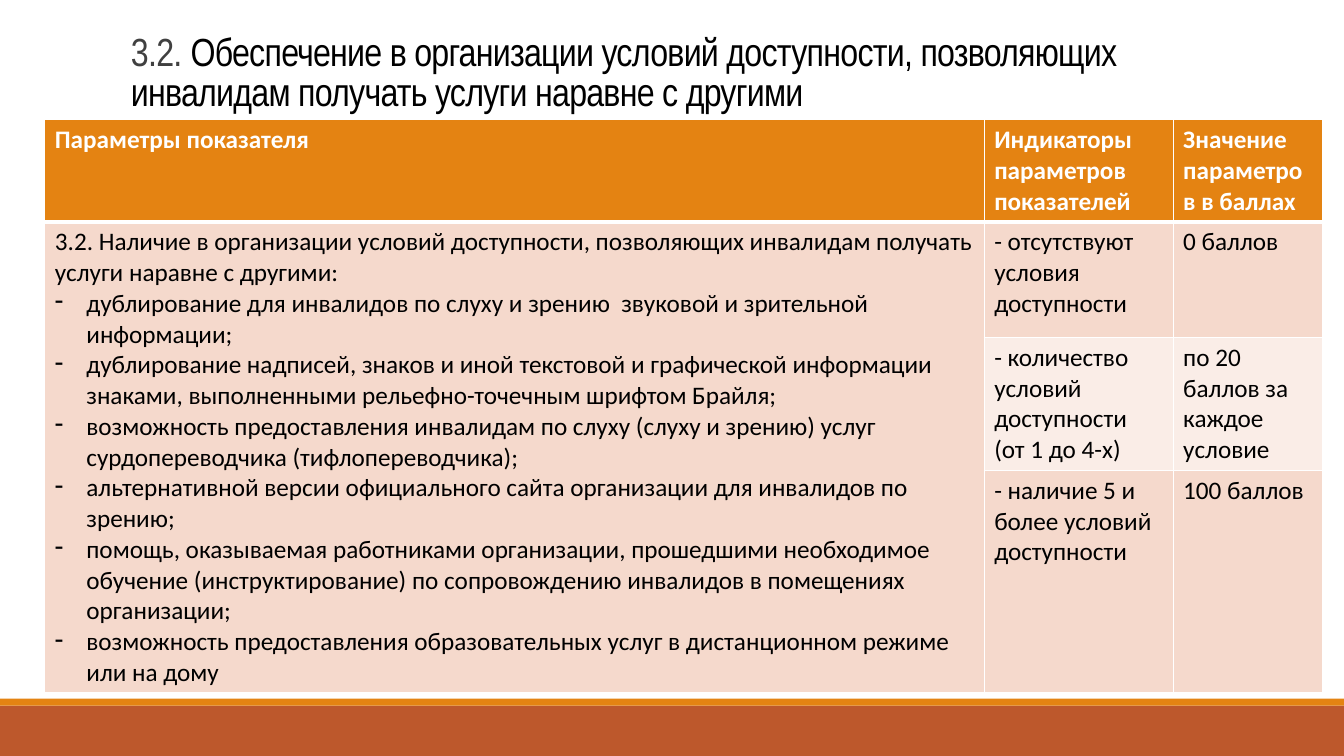
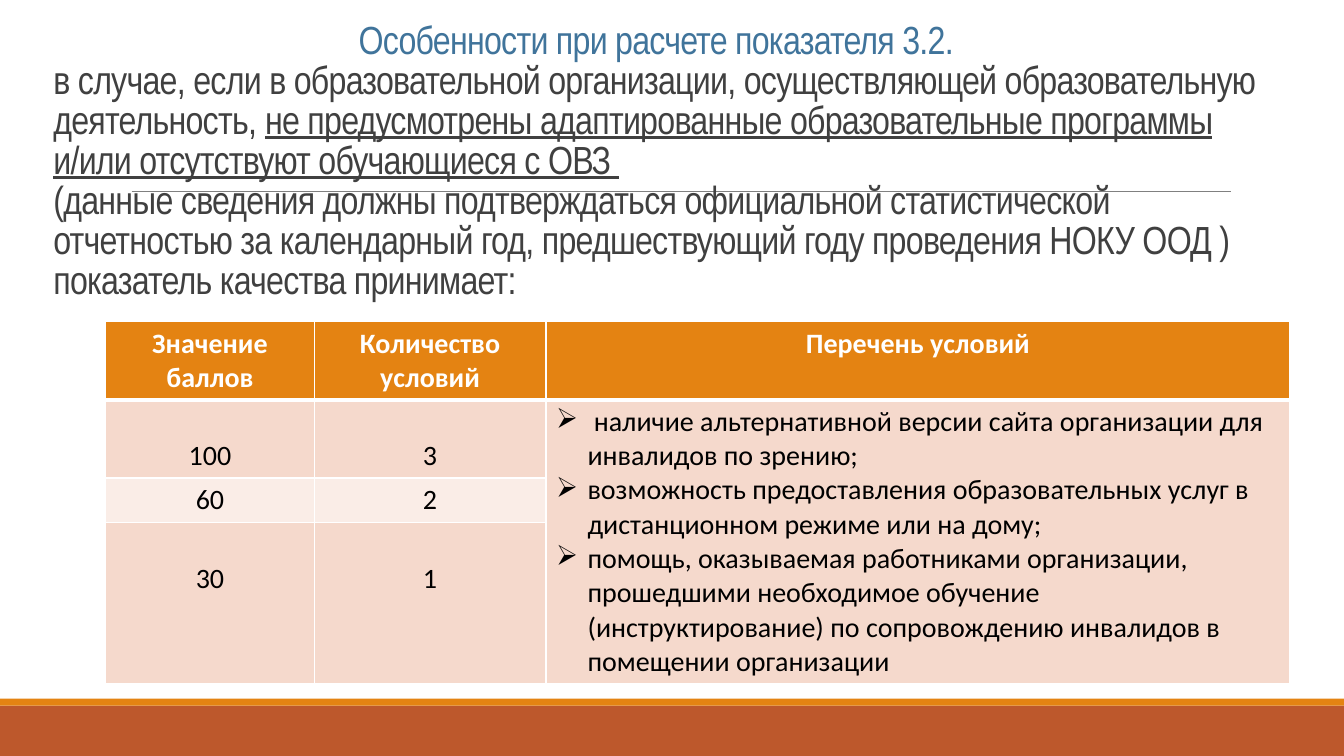
"""Build two slides on accessibility indicator 3.2 and how it is scored."""
from lxml.etree import SubElement
from pptx import Presentation
from pptx.dml.color import RGBColor
from pptx.enum.shapes import MSO_CONNECTOR, MSO_SHAPE
from pptx.enum.text import MSO_ANCHOR, PP_ALIGN
from pptx.oxml.ns import qn
from pptx.util import Pt

WIDTH, HEIGHT = 960, 540
ORANGE, RUST, GRAY, INK, BLUE = "E48312", "BD582C", "808080", "404040", "40749B"
BLACK, WHITE = "000000", "FFFFFF"
ROW_TINTS = ("F5D9CC", "FAEDE7")
TITLE_FONT, BODY_FONT = "Arial Narrow", "Calibri"
BANDS = [(504, 36, RUST), (499, 5, ORANGE)]
RULE = (94, 137, 879)
LIST_INDENT = 22.5

SLIDES = [
    {
        "title_box": (86.5, 11, 792, 74),
        "title": [
            (0, [("3.2. ", INK, False),
                 ("Обеспечение в организации условий доступности, позволяющих инвалидам "
                  "получать услуги наравне с другими", BLACK, False)]),
        ],
        "rule": False,
        "table_at": (32, 85.5),
        "columns": (671, 135, 106.5),
        "rows": (73, 82.5, 95, 159),
        "size": 18,
        "align": PP_ALIGN.LEFT,
        "header": ["Параметры показателя", "Индикаторы параметров показателей",
                   "Значение параметров в баллах"],
        "list_column": 0,
        "bullet": "-",
        "intro": ["3.2. Наличие в организации условий доступности, позволяющих инвалидам "
                  "получать услуги наравне с другими:"],
        "items": [
            "дублирование для инвалидов по слуху и зрению  звуковой и зрительной информации;",
            "дублирование надписей, знаков и иной текстовой и графической информации знаками, "
            "выполненными рельефно-точечным шрифтом Брайля;",
            "возможность предоставления инвалидам по слуху (слуху и зрению) услуг "
            "сурдопереводчика (тифлопереводчика);",
            "альтернативной версии официального сайта организации для инвалидов по зрению;",
            "помощь, оказываемая работниками организации, прошедшими необходимое обучение "
            "(инструктирование) по сопровождению инвалидов в помещениях организации;",
            "возможность предоставления образовательных услуг в дистанционном режиме или на дому",
        ],
        "scores": [
            ("- отсутствуют условия доступности", "0 баллов"),
            ("- количество условий доступности (от 1 до 4-х)", "по 20 баллов за каждое условие"),
            ("- наличие 5 и более условий доступности", "100 баллов"),
        ],
        "top_margins": (3.6, 3.6, 3.6),
    },
    {
        "title_box": (31, 12, 890.5, 207.5),
        "title": [
            (218, [("Особенности при расчете показателя 3.2.", BLUE, False)]),
            (0, [("в случае, если в образовательной организации, осуществляющей "
                  "образовательную деятельность, ", INK, False),
                 ("не предусмотрены адаптированные образовательные программы и/или "
                  "отсутствуют обучающиеся с ОВЗ ", INK, True)]),
            (0, [("(данные сведения должны подтверждаться официальной статистической "
                  "отчетностью за календарный год, предшествующий году проведения НОКУ ООД ) "
                  "показатель качества принимает:", INK, False)]),
        ],
        "rule": True,
        "table_at": (75.5, 229.5),
        "columns": (149, 165.5, 531.5),
        "rows": (56, 56, 32, 115),
        "size": 20,
        "align": PP_ALIGN.CENTER,
        "header": ["Значение баллов", "Количество условий", "Перечень условий"],
        "list_column": 2,
        "bullet": "➢",
        "intro": [],
        "items": [
            " наличие альтернативной версии сайта организации для инвалидов по зрению;",
            "возможность предоставления образовательных услуг в дистанционном режиме или на дому;",
            "помощь, оказываемая работниками организации, прошедшими необходимое обучение "
            "(инструктирование) по сопровождению инвалидов в помещении организации",
        ],
        "scores": [("100", "3"), ("60", "2"), ("30", "1")],
        "top_margins": (28, 3.6, 28),
    },
]


def color(value):
    return RGBColor.from_string(value)


def style_run(run, font_name, size, ink, bold=False, underline=False):
    font = run.font
    font.name, font.size, font.bold = font_name, Pt(size), bold
    font.underline = underline
    font.color.rgb = color(ink)


def indent(paragraph, left, first=0):
    properties = paragraph._p.get_or_add_pPr()
    properties.set("marL", str(int(Pt(left))))
    properties.set("indent", str(int(Pt(first))))
    return properties


def add_backdrop(slide, with_rule):
    for top, height, fill in BANDS:
        band = slide.shapes.add_shape(MSO_SHAPE.RECTANGLE, 0, Pt(top), Pt(WIDTH), Pt(height))
        band.shadow.inherit = False
        band.fill.solid()
        band.fill.fore_color.rgb = color(fill)
        band.line.fill.background()
    if with_rule:
        left, top, right = RULE
        rule = slide.shapes.add_connector(
            MSO_CONNECTOR.STRAIGHT, Pt(left), Pt(top), Pt(right), Pt(top))
        rule.line.color.rgb = color(GRAY)
        rule.line.width = Pt(0.5)
        SubElement(rule._element.spPr, qn("a:effectLst"))


def add_title(slide, box, paragraphs):
    frame = slide.shapes.add_textbox(*map(Pt, box)).text_frame
    frame.word_wrap = True
    frame.vertical_anchor = MSO_ANCHOR.BOTTOM
    for number, (left, parts) in enumerate(paragraphs):
        paragraph = frame.add_paragraph() if number else frame.paragraphs[0]
        paragraph.line_spacing = 0.85
        indent(paragraph, left)
        for text, ink, underline in parts:
            run = paragraph.add_run()
            run.text = text
            style_run(run, TITLE_FONT, 28, ink, underline=underline)
            run.font._element.set("spc", "-50")


def style_cell(cell, fill, bottom_width):
    properties = cell._tc.get_or_add_tcPr()
    for side, width in (("L", 1), ("R", 1), ("T", 1), ("B", bottom_width)):
        border = SubElement(properties, qn(f"a:ln{side}"), w=str(int(Pt(width))))
        paint = SubElement(border, qn("a:solidFill"))
        SubElement(paint, qn("a:srgbClr"), val=WHITE)
    cell.fill.solid()
    cell.fill.fore_color.rgb = color(fill)


def write_cell(cell, lines, size, align, ink=BLACK, bold=False):
    cell.text_frame.text = "\n".join(lines)
    for paragraph in cell.text_frame.paragraphs:
        paragraph.alignment = align
        for run in paragraph.runs:
            style_run(run, BODY_FONT, size, ink, bold)


def add_score_table(slide, content):
    columns, rows = content["columns"], content["rows"]
    size, align, list_column = content["size"], content["align"], content["list_column"]
    table = slide.shapes.add_table(
        len(rows), len(columns), *map(Pt, content["table_at"]),
        Pt(sum(columns)), Pt(sum(rows))).table
    for column, width in zip(table.columns, columns):
        column.width = Pt(width)
    for number, (row, height) in enumerate(zip(table.rows, rows)):
        row.height = Pt(height)
        for cell in row.cells:
            style_cell(cell, ROW_TINTS[(number - 1) % 2] if number else ORANGE,
                       1 if number else 3)

    for column, heading in enumerate(content["header"]):
        write_cell(table.cell(0, column), [heading], size, align, WHITE, True)

    score_columns = [column for column in range(len(columns)) if column != list_column]
    for number, (scores, margin) in enumerate(
            zip(content["scores"], content["top_margins"]), 1):
        for column, score in zip(score_columns, scores):
            cell = table.cell(number, column)
            cell.margin_top = Pt(margin)
            write_cell(cell, [score], size, align)

    conditions = table.cell(1, list_column)
    conditions.merge(table.cell(len(rows) - 1, list_column))
    intro = content["intro"]
    write_cell(conditions, intro + content["items"], size, PP_ALIGN.LEFT)
    for paragraph in conditions.text_frame.paragraphs[len(intro):]:
        properties = indent(paragraph, LIST_INDENT, -LIST_INDENT)
        SubElement(properties, qn("a:buChar"), char=content["bullet"])


def main():
    deck = Presentation()
    deck.slide_width, deck.slide_height = Pt(WIDTH), Pt(HEIGHT)
    for content in SLIDES:
        slide = deck.slides.add_slide(deck.slide_layouts[6])
        add_backdrop(slide, content["rule"])
        add_title(slide, content["title_box"], content["title"])
        add_score_table(slide, content)
    deck.save("out.pptx")


if __name__ == "__main__":
    main()
